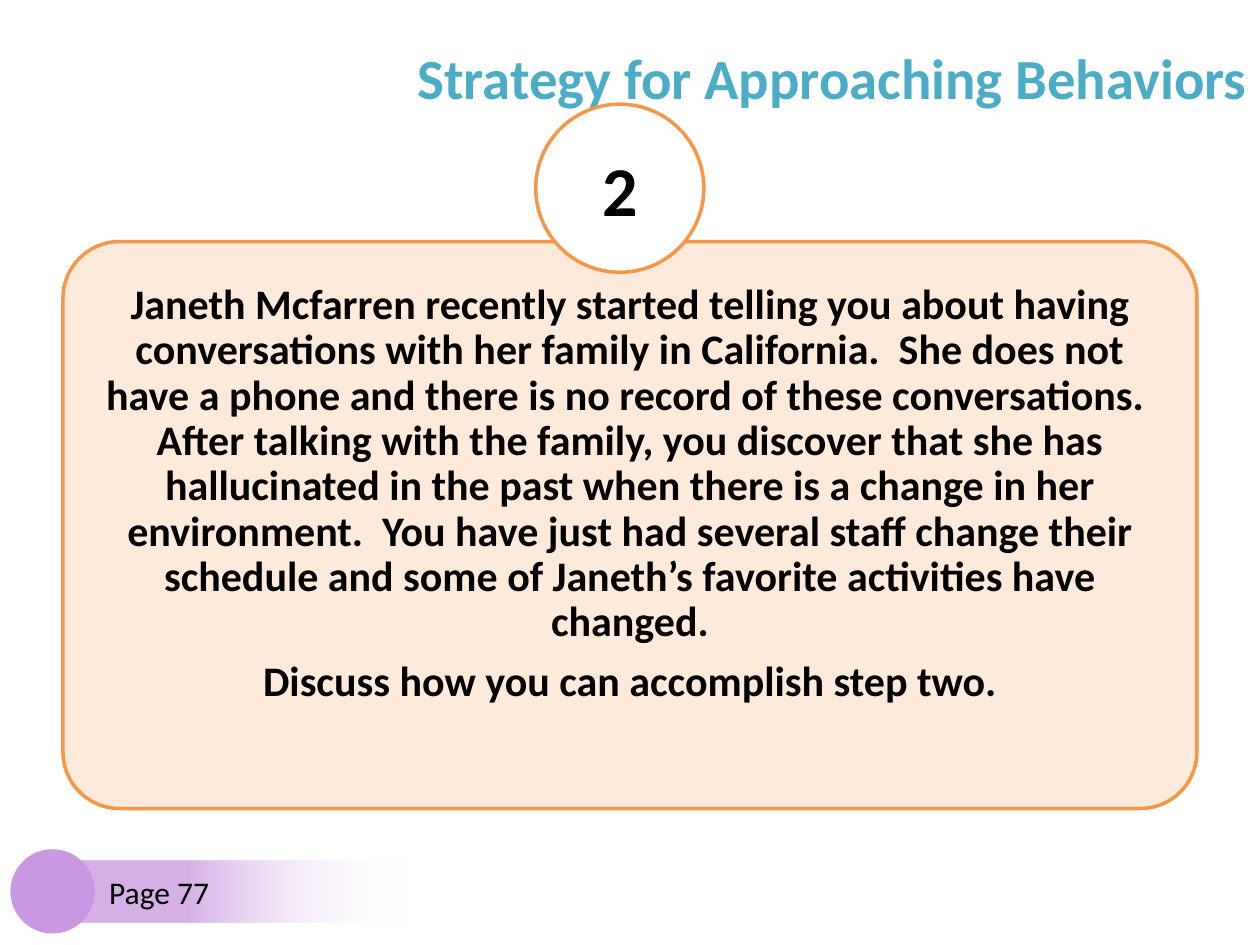
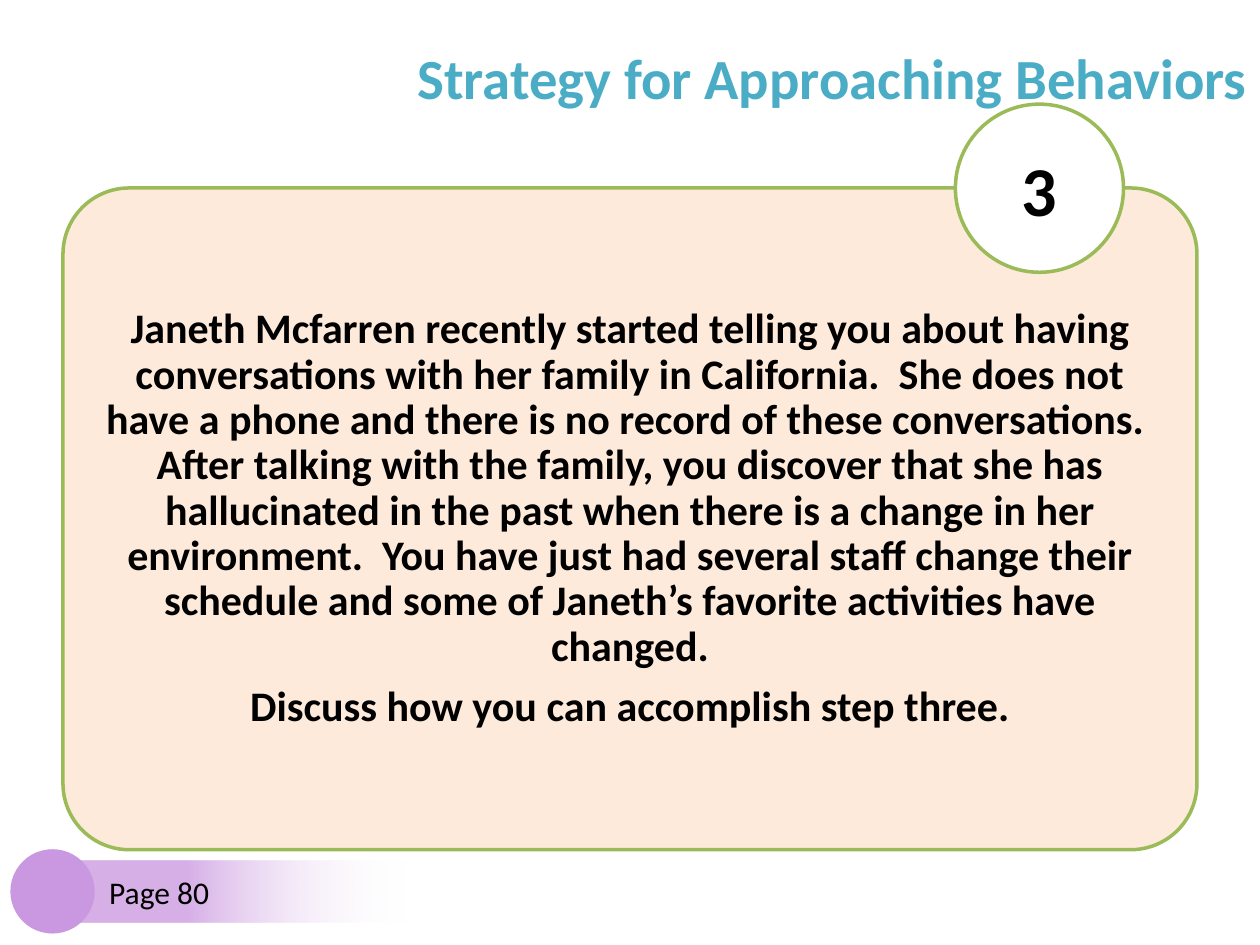
"""Build two case-study slides on strategies for approaching behaviors."""
import pptx
import pptx.util
import pptx.dml.color
import pptx.enum.shapes
import pptx.enum.text
import pptx.oxml

Cm, Pt = pptx.util.Cm, pptx.util.Pt
RGBColor = pptx.dml.color.RGBColor
SHAPE = pptx.enum.shapes.MSO_SHAPE
ALIGN = pptx.enum.text.PP_ALIGN
ANCHOR = pptx.enum.text.MSO_ANCHOR

ORANGE = RGBColor(0xF7, 0x96, 0x46)
GREEN = RGBColor(0x9B, 0xBB, 0x59)
TEAL = RGBColor(0x4B, 0xAC, 0xC6)
PEACH = RGBColor(0xFD, 0xEA, 0xDA)
LILAC = RGBColor(0xD7, 0xB0, 0xE8)
PURPLE = RGBColor(0xCA, 0x97, 0xE1)
BLACK = RGBColor(0, 0, 0)
WHITE = RGBColor(0xFF, 0xFF, 0xFF)

TITLE = "Strategy for Approaching Behaviors"
CASE = (
    "Janeth Mcfarren recently started telling you about having conversations "
    "with her family in California.  She does not have a phone and there is no "
    "record of these conversations.  After talking with the family, you discover "
    "that she has hallucinated in the past when there is a change in her "
    "environment.  You have just had several staff change their schedule and "
    "some of Janeth’s favorite activities have changed."
)
STEPS = [
    {"number": 2, "task": "Discuss how you can accomplish step two.", "page": 77,
     "color": ORANGE, "card_top": 4.87, "card_height": 11.43, "bottom_inset": 1.48},
    {"number": 3, "task": "Discuss how you can accomplish step three.", "page": 80,
     "color": GREEN, "card_top": 3.79, "card_height": 13.34, "bottom_inset": 0.25},
]

FIRST_BADGE_LEFT, BADGE_PITCH = 2.34, 8.46
BADGE_TOP, BADGE_SIZE = 2.1, 3.39

TITLE_FONT = {"size": Pt(32.4), "bold": True, "color": TEAL}
CASE_FONT = {"size": Pt(24), "bold": True, "color": BLACK}
BADGE_FONT = {"size": Pt(40), "bold": True, "color": BLACK}
PAGE_FONT = {"size": Pt(18), "bold": False, "color": BLACK}


def set_alpha(color_element, percent):
    alpha = pptx.oxml.parse_xml(
        '<a:alpha xmlns:a="http://schemas.openxmlformats.org/drawingml/2006/main" '
        f'val="{percent * 1000}"/>')
    color_element.append(alpha)


def write(sp, lines, font, align, **frame):
    tf = sp.text_frame
    settings = {"word_wrap": True, "vertical_anchor": ANCHOR.MIDDLE, **frame}
    for name, value in settings.items():
        setattr(tf, name, value)
    for i, line in enumerate(lines):
        p = tf.add_paragraph() if i else tf.paragraphs[0]
        p.alignment = align
        r = p.add_run()
        r.text = line
        r.font.name = "Calibri"
        r.font.color.rgb = font["color"]
        for name in ("size", "bold"):
            setattr(r.font, name, font[name])
    return tf


def add_shape(s, kind, box, fill=None, line=None):
    sp = s.shapes.add_shape(kind, *map(Cm, box))
    sp.shadow.inherit = False
    if fill is not None:
        sp.fill.solid()
        sp.fill.fore_color.rgb = fill
    if line is None:
        sp.line.fill.background()
    else:
        sp.line.color.rgb = line
        sp.line.width = Pt(2)
    return sp


def add_title(s):
    sp = s.shapes.title
    box = {"left": 2.54, "top": 0.76, "width": 22.86, "height": 1.57}
    for name, value in box.items():
        setattr(sp, name, Cm(value))
    sp.fill.solid()
    sp.fill.fore_color.rgb = WHITE
    set_alpha(sp.element.spPr.find(".//{*}srgbClr"), 75)
    write(sp, [TITLE], TITLE_FONT, ALIGN.RIGHT,
          auto_size=pptx.enum.text.MSO_AUTO_SIZE.NONE)


def add_card(s, step):
    box = (1.27, step["card_top"], 22.86, step["card_height"])
    card = add_shape(s, SHAPE.ROUNDED_RECTANGLE, box, PEACH, step["color"])
    card.adjustments[0] = 0.1
    tf = write(card, [CASE, step["task"]], CASE_FONT, ALIGN.CENTER,
               margin_left=Cm(0.25), margin_right=Cm(0.25), margin_top=Cm(0.25),
               margin_bottom=Cm(step["bottom_inset"]))
    for p in tf.paragraphs:
        p.line_spacing = 0.9
        p.space_after = Pt(8.4)


def add_badge(s, step):
    left = FIRST_BADGE_LEFT + BADGE_PITCH * (step["number"] - 1)
    box = (left, BADGE_TOP, BADGE_SIZE, BADGE_SIZE)
    badge = add_shape(s, SHAPE.OVAL, box, WHITE, step["color"])
    write(badge, [str(step["number"])], BADGE_FONT, ALIGN.CENTER)


def add_footer(s, page):
    bar = add_shape(s, SHAPE.ROUNDED_RECTANGLE, (1.48, 17.35, 7.62, 1.25))
    bar.fill.gradient()
    bar.fill.gradient_angle = 0
    for stop, color, position in zip(bar.fill.gradient_stops, (LILAC, WHITE), (0.3, 0.88)):
        stop.color.rgb = color
        stop.position = position
    set_alpha(bar.element.spPr.findall(".//{*}gs/{*}srgbClr")[-1], 0)
    write(bar, [f"Page {page}"], PAGE_FONT, ALIGN.LEFT, margin_left=Cm(0.66))
    add_shape(s, SHAPE.OVAL, (0.21, 17.12, 1.7, 1.7), PURPLE)


def main():
    prs = pptx.Presentation()
    prs.slide_width, prs.slide_height = Cm(25.4), Cm(19.05)
    for step in STEPS:
        s = prs.slides.add_slide(prs.slide_layouts[5])
        add_title(s)
        add_card(s, step)
        add_badge(s, step)
        add_footer(s, step["page"])
    prs.save("out.pptx")


if __name__ == "__main__":
    main()
